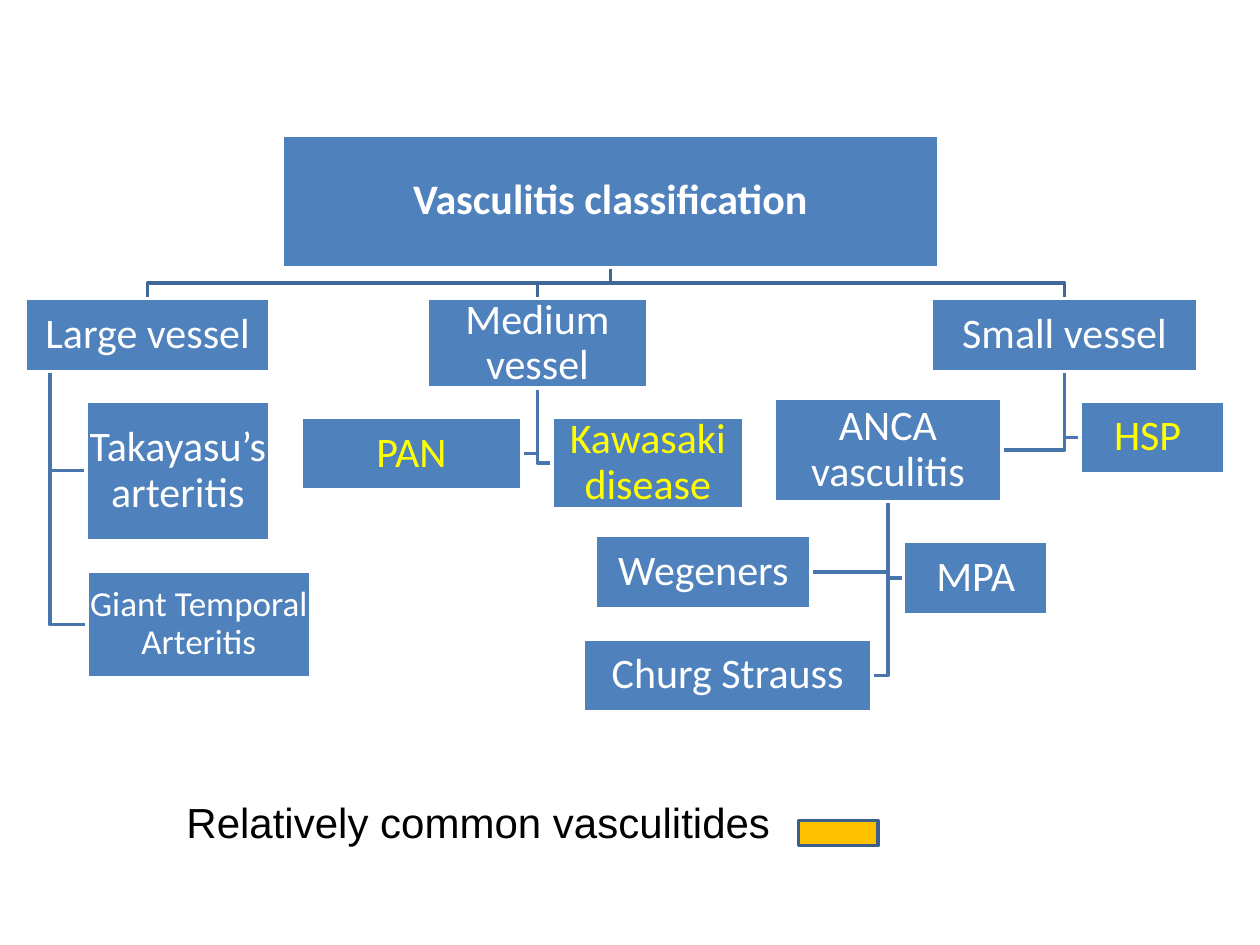
from pptx import Presentation
from pptx import util as u
from pptx.dml.color import RGBColor
from pptx.enum import shapes, text

BLUE, WHITE, YELLOW = "4F81BD", "FFFFFF", "FFFF00"
ROOT = "Vasculitis classification"


def paint(shape, fill, line):
    """Give the shape a fill (None for no fill) and a 2 pt outline."""
    if fill:
        shape.fill.solid()
        shape.fill.fore_color.rgb = RGBColor.from_string(fill)
    else:
        shape.fill.background()
    shape.line.color.rgb = RGBColor.from_string(line)
    shape.line.width = u.Pt(2)


def write(shape, words, size=24, color=WHITE, bold=False, font="Calibri",
          align=text.PP_ALIGN.CENTER, anchor=text.MSO_ANCHOR.MIDDLE,
          spacing=0.9, inset=0.04):
    frame = shape.text_frame
    frame.word_wrap = True
    frame.auto_size = text.MSO_AUTO_SIZE.NONE
    frame.vertical_anchor = anchor
    if inset is not None:
        frame.margin_left = frame.margin_right = u.Cm(inset)
        frame.margin_top = frame.margin_bottom = u.Cm(inset)
    paragraph = frame.paragraphs[0]
    paragraph.alignment = align
    paragraph.line_spacing = spacing
    run = paragraph.add_run()
    run.text = words
    run.font.name = font
    run.font.size = u.Pt(size)
    run.font.bold = bold
    run.font.color.rgb = RGBColor.from_string(color)


deck = Presentation()
deck.slide_width, deck.slide_height = u.Cm(25.4), u.Cm(19.05)
slide = deck.slides.add_slide(deck.slide_layouts[5])

# Words: parent, (left, top, width, height) in cm, text format
nodes = {
    ROOT: (None, (5.69, 2.72, 13.23, 2.67), {"bold": True}),
    "Large vessel": (ROOT, (0.51, 6.02, 4.93, 1.47), {}),
    "Takayasu’s arteritis": ("Large vessel", (1.73, 8.08, 3.71, 2.82), {}),
    "Giant Temporal Arteritis": ("Large vessel", (1.75, 11.51, 4.52, 2.16),
                                 {"size": 20}),
    "Medium vessel": (ROOT, (8.61, 6.02, 4.45, 1.8), {}),
    "PAN": ("Medium vessel", (6.07, 8.41, 4.45, 1.47), {"color": YELLOW}),
    "Kawasaki disease": ("Medium vessel", (11.13, 8.41, 3.86, 1.85),
                         {"color": YELLOW}),
    "Small vessel": (ROOT, (18.77, 6.02, 5.38, 1.47), {}),
    "ANCA vasculitis": ("Small vessel", (15.6, 8.03, 4.6, 2.08), {}),
    "Wegeners": ("ANCA vasculitis", (12.01, 10.8, 4.34, 1.47), {}),
    "MPA": ("ANCA vasculitis", (18.21, 10.92, 2.92, 1.47), {}),
    "Churg Strauss": ("ANCA vasculitis", (11.76, 12.88, 5.82, 1.47), {}),
    "HSP ": ("Small vessel", (21.77, 8.08, 2.92, 1.47), {"color": YELLOW}),
}

# Branches lie behind the boxes
for parent, (left, top, width, height), _ in nodes.values():
    if parent is None:
        continue
    p_left, p_top, p_width, p_height = nodes[parent][1]
    trunk = p_left + p_width * (0.1 if parent == "Large vessel" else 0.5)
    bottom = p_top + p_height
    if parent == ROOT:
        bend, center = (bottom + top) / 2, left + width / 2
        points = [(trunk, bottom), (trunk, bend), (center, bend), (center, top)]
    else:
        middle = top + height / 2
        side = left if left > trunk else left + width
        points = [(trunk, bottom), (trunk, middle), (side, middle)]
    start, *rest = [(u.Cm(x), u.Cm(y)) for x, y in points]
    builder = slide.shapes.build_freeform(*start)
    builder.add_line_segments(rest, close=False)
    branch = builder.convert_to_shape()
    branch.shadow.inherit = False
    paint(branch, None, "3F6797" if parent == ROOT else "4875AC")

for words, (parent, place, style) in nodes.items():
    if parent is None:
        box = slide.shapes.title
        box.left, box.top, box.width, box.height = map(u.Cm, place)
        slide.shapes.element.append(box.element)  # bring in front of the branches
    else:
        box = slide.shapes.add_shape(shapes.MSO_SHAPE.RECTANGLE, *map(u.Cm, place))
        box.shadow.inherit = False
    paint(box, BLUE, WHITE)
    write(box, words, **style)

legend = slide.shapes.add_textbox(u.Cm(3.51), u.Cm(15.93), u.Cm(18.21), u.Cm(1.27))
write(legend, "Relatively common vasculitides", color="000000", font="Arial",
      align=text.PP_ALIGN.LEFT, anchor=text.MSO_ANCHOR.TOP, spacing=1.0, inset=None)
swatch = slide.shapes.add_shape(shapes.MSO_SHAPE.RECTANGLE,
                                u.Cm(16.1), u.Cm(16.54), u.Cm(1.6), u.Cm(0.51))
swatch.shadow.inherit = False
paint(swatch, "FFC000", "3A5F8C")

deck.save("out.pptx")
